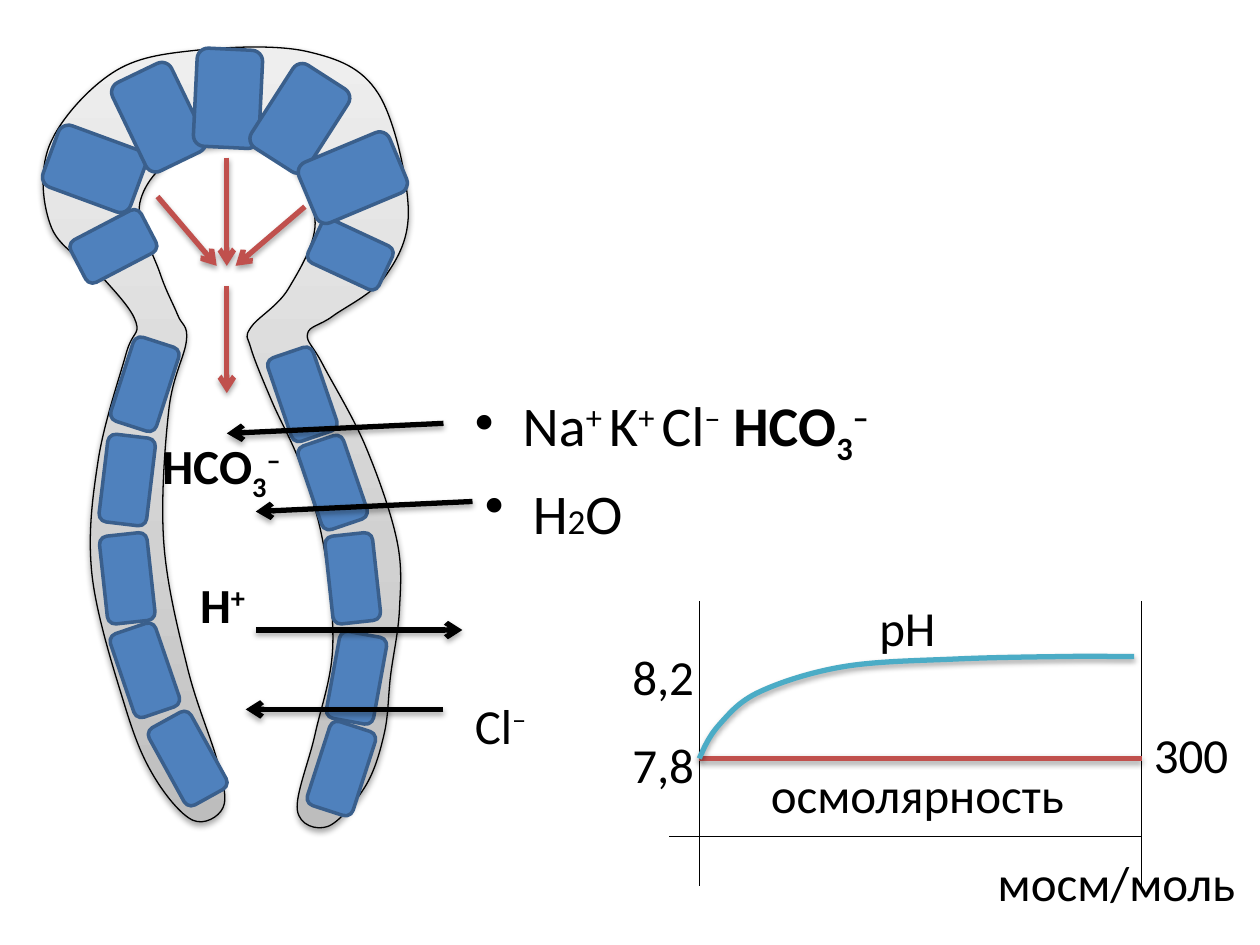
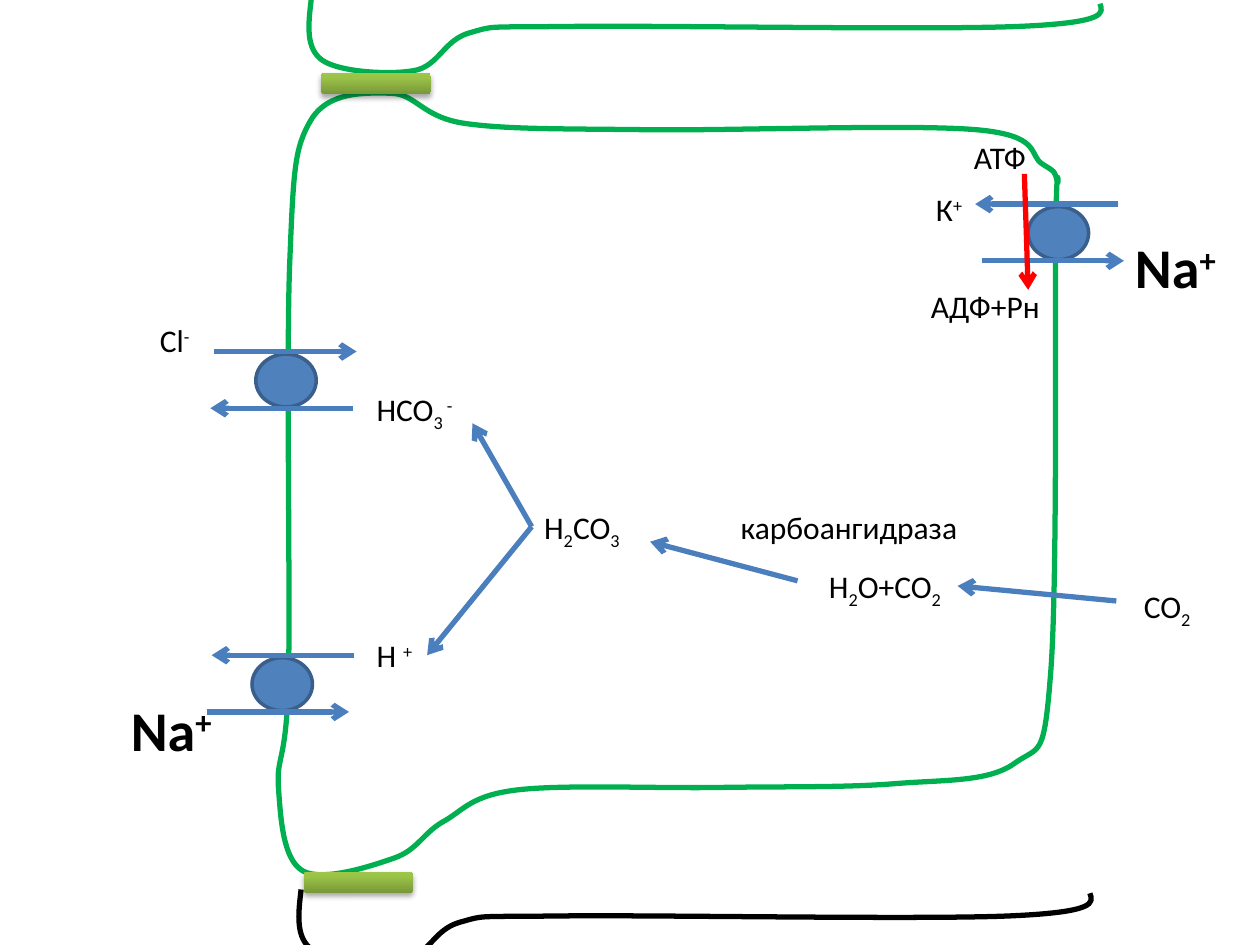
from lxml.etree import SubElement
from pptx import Presentation
from pptx.dml.color import RGBColor
from pptx.enum.shapes import MSO_CONNECTOR as Link, MSO_SHAPE as Preset
from pptx.enum.text import MSO_AUTO_SIZE as AutoSize
from pptx.oxml.ns import qn
from pptx.util import Cm, Pt

COLORS = {
    "ink": "000000", "cell": "4F81BD", "cell edge": "3A5F8C", "flow": "4B7EBC",
    "secretion": "C0504D", "pH": "4BACC6", "membrane": "00B050", "energy": "FF0000",
}
GRADIENTS = {
    "duct": [(0, "BDBDBD"), (35, "D1D1D1"), (100, "EEEEEE")],
    "junction": [(0, "779737"), (80, "9BC348"), (100, "9DC746")],
}
# Marks that open a part of a formula: superscript, subscript, small digit
MARKS = {
    "^": {"baseline": "30000"},
    "_": {"baseline": "-25000"},
    "~": {"sz": "2000"},
}


def grid(value):
    """Turn a position on the inch grid into a length."""
    return Cm(value * 2.54)


class Sketch:
    """Holds the drawing style and the slide being drawn."""

    font = "Calibri"
    weight = 3

    def __init__(self):
        self.deck = Presentation()
        self.deck.slide_width, self.deck.slide_height = grid(10), grid(7.5)

    def new_slide(self):
        self.slide = self.deck.slides.add_slide(self.deck.slide_layouts[6])
        self.shapes = self.slide.shapes

    def open_group(self):
        self.shapes = self.slide.shapes.add_group_shape().shapes

    def close_group(self):
        self.shapes = self.slide.shapes

    def stroke(self, item, color, weight):
        item.line.color.rgb = RGBColor.from_string(COLORS[color])
        item.line.width = Pt(weight)

    def paint(self, item, fill):
        if fill is None:
            item.fill.background()
        elif fill in GRADIENTS:
            item.fill.gradient()
            item.fill.gradient_angle = 90
            stops = item._element.spPr.find(".//" + qn("a:gsLst"))
            stops.clear()
            for position, color in GRADIENTS[fill]:
                stop = SubElement(stops, qn("a:gs"), pos=str(position * 1000))
                SubElement(stop, qn("a:srgbClr"), val=color)
        else:
            item.fill.solid()
            item.fill.fore_color.rgb = RGBColor.from_string(COLORS[fill])

    def shade(self, item, shadow):
        """Replace the theme shadow by a soft one or by none."""
        effects = SubElement(item._element.spPr, qn("a:effectLst"))
        if shadow:
            outer = SubElement(effects, qn("a:outerShdw"), blurRad="40000", dist="23000",
                               dir="5400000", rotWithShape="0")
            color = SubElement(outer, qn("a:srgbClr"), val=COLORS["ink"])
            SubElement(color, qn("a:alpha"), val="35000")

    def block(self, preset, left, top, width, height, fill, edge=None, turn=0, shadow=False):
        item = self.shapes.add_shape(preset, *map(grid, (left, top, width, height)))
        item.rotation = turn
        self.paint(item, fill)
        if edge:
            self.stroke(item, edge, 2)
        else:
            item.line.fill.background()
        self.shade(item, shadow)

    def cell(self, left, top, width, height, turn):
        self.block(Preset.ROUNDED_RECTANGLE, left, top, width, height, "cell", "cell edge", turn)

    def line(self, start, end, color, weight=weight, arrow=True, shadow=False):
        item = self.shapes.add_connector(Link.STRAIGHT, *map(grid, (*start, *end)))
        self.stroke(item, color, weight)
        if arrow:
            SubElement(item._element.spPr.find(qn("a:ln")), qn("a:tailEnd"), type="arrow")
        self.shade(item, shadow)
        return item

    def curve(self, anchors, color, weight=weight, closed=False, fill=None, shadow=False):
        """Draw a smooth outline whose tangent at an anchor follows its neighbours."""
        points = [(grid(x), grid(y)) for x, y in anchors]
        if closed:
            points.append(points[0])
        builder = self.shapes.build_freeform(*points[0], scale=1.0)
        builder.add_line_segments(points[1:], close=closed)
        item = builder.convert_to_shape()

        x0, y0 = (min(axis) for axis in zip(*points))
        points = [(x - x0, y - y0) for x, y in points]
        last = len(points) - 1

        def control(here, side):
            before, after = here - 1, here + 1
            if closed and here in (0, last):
                before, after = last - 1, 1
            elif here in (0, last):
                return None
            return tuple(p + side * (b - a) / 6 for p, a, b in
                         zip(points[here], points[before], points[after]))

        def midway(a, b):
            return tuple((p + q) / 2 for p, q in zip(a, b))

        steps = item._element.spPr.findall(".//" + qn("a:lnTo"))
        for i, step in enumerate(steps):
            leave, arrive = control(i, 1), control(i + 1, -1)
            leave = leave or midway(points[i], arrive)
            arrive = arrive or midway(points[i + 1], leave)
            step.tag = qn("a:cubicBezTo")
            for place, (x, y) in enumerate((leave, arrive)):
                handle = step.makeelement(qn("a:pt"), {"x": str(round(x)), "y": str(round(y))})
                step.insert(place, handle)

        self.paint(item, fill)
        self.stroke(item, color, weight)
        self.shade(item, shadow)

    def text(self, formula, left, top, width, height, size=18, bold=False, bullet=False):
        """Write parts split by |; a mark opens a part, * makes it bold."""
        box = self.shapes.add_textbox(*map(grid, (left, top, width, height)))
        frame = box.text_frame
        frame.word_wrap = bullet
        frame.auto_size = AutoSize.NONE if bullet else AutoSize.SHAPE_TO_FIT_TEXT
        paragraph = frame.paragraphs[0]
        if bullet:
            paragraph.space_before = Pt(size * 0.2)
            props = paragraph._p.get_or_add_pPr()
            for name, value in {"marL": grid(0.38), "indent": -grid(0.38)}.items():
                props.set(name, str(value))
            SubElement(props, qn("a:buChar"), char="•")
        for part in formula.split("|"):
            strong = bold or part.startswith("*")
            part = part.removeprefix("*")
            mark = part[0] if part[0] in MARKS else ""
            run = paragraph.add_run()
            run.text = part.removeprefix(mark)
            for name, value in {"name": self.font, "size": Pt(size), "bold": strong}.items():
                setattr(run.font, name, value)
            run.font.color.rgb = RGBColor.from_string(COLORS["ink"])
            for name, value in MARKS.get(mark, {}).items():
                run.font._element.set(name, value)
        return box

    def pump(self, left, top, upper, lower):
        """Draw a carrier with one arrow above it and one below."""
        self.block(Preset.OVAL, left, top, 0.48, 0.42, "cell", "cell edge")
        for (start, end), y in ((upper, top - 0.02), (lower, top + 0.43)):
            self.line((start, y), (end, y), "flow")


DUCT = [
    (1.48, 2.7), (1.34, 3.25), (1.3, 4.31), (1.49, 5.31), (1.73, 6.06), (1.77, 6.41),
    (1.53, 6.51), (1.22, 6.16), (0.99, 5.6), (0.73, 4.56), (0.78, 3.65), (1, 2.81),
    (1.08, 2.56), (0.82, 2.21), (0.41, 1.81), (0.39, 1.16), (0.89, 0.58), (1.55, 0.4),
    (2.44, 0.41), (3, 0.74), (3.24, 1.65), (3.06, 2.19), (2.64, 2.51), (2.44, 2.65),
    (2.56, 2.89), (2.9, 3.54), (3.15, 4.29), (3.17, 4.84), (3.1, 5.36), (3.05, 5.82),
    (2.9, 6.24), (2.6, 6.56), (2.36, 6.43), (2.5, 5.83), (2.64, 5.15), (2.57, 4.34),
    (2.39, 3.7), (2.16, 3.19), (1.99, 2.76), (1.99, 2.6), (2.29, 2.29), (2.5, 1.74),
    (2.19, 1.21), (1.47, 1.21), (1.11, 1.61), (1.27, 2.17), (1.41, 2.5),
]
DUCT_CELLS = [
    (0.96, 2.7, 17.9), (0.82, 3.46, 6.8), (0.82, 4.24, 353.8), (0.96, 4.97, 341.1),
    (1.3, 5.67, 331.1), (2.21, 2.78, 341.1), (2.45, 3.48, 341.1), (2.52, 5.75, 17.9),
    (2.64, 5.03, 10.3), (2.61, 4.24, 353.8),
]
ACINUS_CELLS = [
    (0.71, 1.64, 0.38, 0.63, 242.4), (2.59, 1.71, 0.38, 0.62, 114.9),
    (0.49, 0.97, 0.52, 0.74, 290.2), (1, 0.54, 0.52, 0.78, 334.3),
    (1.55, 0.39, 0.52, 0.78, 2.8), (2.12, 0.55, 0.52, 0.78, 32.7),
    (2.54, 1.02, 0.52, 0.78, 67.3),
]
PH_CURVE = [(5.55, 6.02), (5.71, 5.75), (6.03, 5.49), (6.7, 5.29), (7.6, 5.23),
            (8.48, 5.21), (8.86, 5.21), (9, 5.21)]
CELL_MEMBRANE = [
    (2.29, 5.37), (2.3, 2.08), (2.47, 0.95), (3.1, 0.74), (3.69, 0.98), (5.14, 1.03),
    (7.75, 1.03), (8.27, 1.3), (8.39, 1.44), (8.38, 1.8), (8.34, 5.33), (8.05, 6.06),
    (7.1, 6.22), (5.71, 6.25), (4.1, 6.27), (3.52, 6.52), (3.13, 6.81), (2.4, 6.91),
    (2.21, 6.25),
]
NEXT_MEMBRANE = [(2.47, 0), (2.56, 0.48), (3.29, 0.56), (3.73, 0.26), (4.55, 0.21),
                 (8.09, 0.21), (8.73, 0.03)]


def draw_duct(sketch):
    sketch.new_slide()
    sketch.text("Na|^+ |K|^+ |Сl|^–| |*НСО|*_3|*^–", 3.67, 3.05, 3.98, 0.67, 32, bullet=True)

    # Gland wall and its cells
    sketch.curve(DUCT, "ink", 0.75, closed=True, fill="duct", shadow=True)
    for left, top, turn in DUCT_CELLS:
        sketch.cell(left, top, 0.38, 0.7, turn)
    for place in ACINUS_CELLS:
        sketch.cell(*place)

    # Ion and water flows
    for start, end in (((3.52, 3.36), (1.8, 3.44)), ((3.75, 3.98), (2.03, 4.06)),
                       ((2.03, 5), (3.67, 5)), ((3.52, 5.63), (1.95, 5.63))):
        sketch.line(start, end, "ink", shadow=True)
    sketch.text("H|~2|O", 3.75, 3.75, 3.98, 0.67, 32, bullet=True)
    for start, end in (((1.8, 1.25), (1.8, 2.11)), ((2.42, 1.64), (1.87, 2.11)),
                       ((1.25, 1.56), (1.72, 2.11)), ((1.8, 2.27), (1.8, 3.12))):
        sketch.line(start, end, "secretion", shadow=True)

    # Graph of pH and osmolarity
    for start, end in (((5.55, 4.77), (5.55, 7.03)), ((9.06, 6.64), (5.31, 6.64)),
                       ((9.06, 4.77), (9.06, 7.03))):
        sketch.line(start, end, "ink", 0.75, arrow=False)
    sketch.line((9.06, 6.02), (5.55, 6.02), "secretion", arrow=False, shadow=True)
    sketch.curve(PH_CURVE, "pH", shadow=True)

    # Labels
    for label, left, top, width, bold in (
        ("осмолярность", 6.02, 6.02, 2.55, False), ("рН", 6.88, 4.69, 0.65, False),
        ("НСО|_3|^–", 1.19, 3.41, 1.19, True), ("Сl|^–", 3.67, 5.47, 0.63, False),
        ("7,8", 4.92, 5.78, 0.7, False), ("8,2", 4.92, 5.08, 0.7, False),
        ("300", 9.06, 5.7, 0.8, False), ("мосм/моль", 7.82, 6.72, 2.18, False),
        ("Н|^+", 1.49, 4.51, 0.67, True),
    ):
        sketch.text(label, left, top, width, 0.57, 28, bold)


def draw_transport(sketch):
    sketch.new_slide()

    # Membranes and tight junctions
    sketch.curve(CELL_MEMBRANE, "membrane", closed=True)
    sketch.curve(NEXT_MEMBRANE, "membrane")
    sketch.curve([(x - 0.08, y + 7.06) for x, y in NEXT_MEMBRANE], "ink")
    for left, top in ((2.55, 0.58), (2.41, 6.92)):
        sketch.block(Preset.ROUNDED_RECTANGLE, left, top, 0.87, 0.17, "junction", shadow=True)

    # Sodium-potassium pump
    sketch.open_group()
    sketch.pump(8.16, 1.64, (8.87, 7.74), (7.79, 8.92))
    sketch.line((8.13, 1.38), (8.16, 2.3), "energy")
    sketch.text("Na|^+", 8.91, 1.8, 0.87, 0.64, 32, bold=True)
    sketch.text("К|^+", 7.33, 1.46, 0.45, 0.4)
    sketch.text("АТФ", 7.63, 1.05, 0.69, 0.4)
    sketch.text("АДФ+Рн", 7.29, 2.23, 1.19, 0.4)

    # Sodium-proton exchanger
    sketch.open_group()
    sketch.pump(2, 5.22, (2.81, 1.68), (1.64, 2.77))
    sketch.text("Na|^+", 0.94, 5.47, 0.87, 0.64, 32, bold=True)

    # Chloride-bicarbonate exchanger
    sketch.open_group()
    sketch.text("Cl|^-", 1.17, 2.5, 0.47, 0.4)
    sketch.pump(2.03, 2.81, (1.7, 2.83), (2.8, 1.67))
    sketch.close_group()

    # Carbonic acid chain
    proton = sketch.text("H |^+", 2.89, 5, 0.5, 0.4)
    acid = sketch.text("H|_2|CO|_3", 4.22, 3.98, 0.83, 0.4)
    sketch.text("HCO|_3 |^-", 2.89, 3.05, 0.89, 0.4)
    hydration = sketch.text("H|_2|O+CO|_2", 6.48, 4.45, 1.12, 0.4)
    sketch.text("CO|_2", 8.98, 4.61, 0.59, 0.4)
    sketch.text("карбоангидраза", 5.78, 3.98, 1.94, 0.4)
    sketch.line((8.86, 4.77), (7.61, 4.66), "flow").end_connect(hydration, 3)
    sketch.line((6.33, 4.61), (5.16, 4.3), "flow")
    sketch.line((4.22, 4.19), (3.75, 3.36), "flow").begin_connect(acid, 1)
    release = sketch.line((4.22, 4.19), (3.39, 5.2), "flow")
    release.begin_connect(acid, 1)
    release.end_connect(proton, 3)


def main():
    sketch = Sketch()
    draw_duct(sketch)
    draw_transport(sketch)
    sketch.deck.save("out.pptx")


if __name__ == "__main__":
    main()
